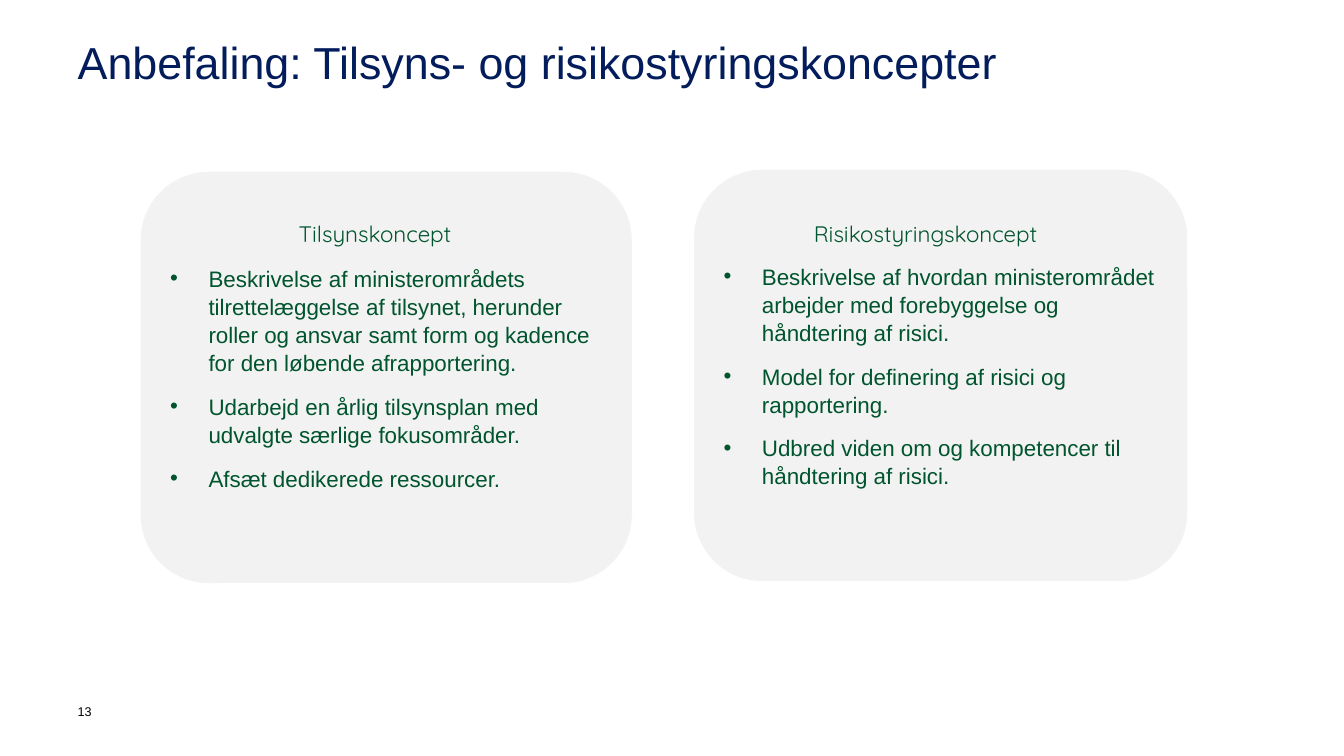
"""Build a slide recommending a supervision concept and a risk management concept."""
from dataclasses import dataclass

import lxml.etree
import pptx
import pptx.dml.color
import pptx.enum.shapes
import pptx.enum.text
import pptx.oxml.ns
import pptx.shapes.base
import pptx.slide
import pptx.text.text
import pptx.util

SLIDE_WIDTH = pptx.util.Inches(13.33)
SLIDE_HEIGHT = pptx.util.Inches(7.5)
COLOURS = {"navy": "031D5C", "green": "00542E", "panel": "F2F2F2", "white": "FFFFFF", "black": "000000"}
BULLET_INDENT = pptx.util.Inches(0.38)


@dataclass(frozen=True)
class Area:
    """A rectangle in percent of the slide's width and height."""

    left: float
    top: float
    width: float
    height: float

    def lengths(self) -> tuple[int, int, int, int]:
        """Return left, top, width and height as slide lengths."""
        return (
            int(SLIDE_WIDTH * self.left / 100),
            int(SLIDE_HEIGHT * self.top / 100),
            int(SLIDE_WIDTH * self.width / 100),
            int(SLIDE_HEIGHT * self.height / 100),
        )


@dataclass(frozen=True)
class TextStyle:
    """Font, size, colour and line spacing of a text."""

    font: str
    size: float
    colour: str
    line_spacing: float = 1.0


@dataclass(frozen=True)
class Concept:
    """A rounded panel with a heading and bullet points."""

    panel: Area
    heading_area: Area
    heading_inset: float
    heading: str
    points: tuple[str, ...]


TITLE_STYLE = TextStyle("Arial", 32, "navy", 0.9)
HEADING_STYLE = TextStyle("Quicksand", 16, "green", 1.08)
POINT_STYLE = TextStyle("Arial", 16, "green", 1.05)
NUMBER_STYLE = TextStyle("Arial", 9, "black")

CONCEPTS = (
    Concept(
        Area(10.43, 22.67, 36.61, 54.53),
        Area(21.08, 28.8, 17.33, 3.87),
        0.49,
        "Tilsynskoncept",
        (
            "Beskrivelse af ministerområdets tilrettelæggelse af tilsynet, herunder roller og ansvar "
            "samt form og kadence for den løbende afrapportering.",
            "Udarbejd en årlig tilsynsplan med udvalgte særlige fokusområder.",
            "Afsæt dedikerede ressourcer.",
        ),
    ),
    Concept(
        Area(51.61, 22.4, 36.76, 54.53),
        Area(59.49, 28.8, 24.76, 3.6),
        0.8,
        "Risikostyringskoncept",
        (
            "Beskrivelse af hvordan ministerområdet arbejder med forebyggelse og håndtering af risici.",
            "Model for definering af risici og rapportering.",
            "Udbred viden om og kompetencer til håndtering af risici.",
        ),
    ),
)


def colour(name: str) -> pptx.dml.color.RGBColor:
    """Return a named colour."""
    return pptx.dml.color.RGBColor.from_string(COLOURS[name])


def write(paragraph: pptx.text.text._Paragraph, text: str, style: TextStyle) -> None:
    """Add one styled run to a paragraph."""
    paragraph.line_spacing = style.line_spacing
    run = paragraph.add_run()
    run.text = text
    run.font.name = style.font
    run.font.size = pptx.util.Pt(style.size)
    run.font.color.rgb = colour(style.colour)


def add_bullet(paragraph: pptx.text.text._Paragraph) -> None:
    """Give a paragraph a hanging bullet."""
    properties = paragraph._p.get_or_add_pPr()
    properties.set("marL", str(BULLET_INDENT))
    properties.set("indent", str(-BULLET_INDENT))
    bullet_font = lxml.etree.SubElement(properties, pptx.oxml.ns.qn("a:buFont"))
    bullet_font.set("typeface", "Arial")
    bullet = lxml.etree.SubElement(properties, pptx.oxml.ns.qn("a:buChar"))
    bullet.set("char", "•")


def add_label(
    slide: pptx.slide.Slide,
    area: Area,
    text: str,
    style: TextStyle,
    alignment: pptx.enum.text.PP_ALIGN = pptx.enum.text.PP_ALIGN.LEFT,
    right_inset: float = 0,
) -> None:
    """Add a text box with one line of text."""
    frame = slide.shapes.add_textbox(*area.lengths()).text_frame
    frame.word_wrap = True
    frame.margin_left = frame.margin_top = frame.margin_bottom = 0
    frame.margin_right = pptx.util.Inches(right_inset)
    paragraph = frame.paragraphs[0]
    paragraph.alignment = alignment
    write(paragraph, text, style)


def add_concept(slide: pptx.slide.Slide, concept: Concept) -> None:
    """Add a panel with its bullet points and heading."""
    panel = slide.shapes.add_shape(
        pptx.enum.shapes.MSO_SHAPE.ROUNDED_RECTANGLE, *concept.panel.lengths()
    )
    panel.shadow.inherit = False
    panel.fill.solid()
    panel.fill.fore_color.rgb = colour("panel")
    panel.line.color.rgb = colour("white")
    panel.line.width = pptx.util.Pt(0.5)
    frame = panel.text_frame
    frame.word_wrap = True
    frame.vertical_anchor = pptx.enum.text.MSO_ANCHOR.MIDDLE
    for index, point in enumerate(concept.points):
        paragraph = frame.add_paragraph() if index else frame.paragraphs[0]
        add_bullet(paragraph)
        paragraph.alignment = pptx.enum.text.PP_ALIGN.LEFT
        paragraph.space_before = pptx.util.Pt(11 if index else 0)
        write(paragraph, point, POINT_STYLE)
    add_label(
        slide,
        concept.heading_area,
        concept.heading,
        HEADING_STYLE,
        pptx.enum.text.PP_ALIGN.CENTER,
        concept.heading_inset,
    )


def main() -> None:
    """Build and save the presentation."""
    presentation = pptx.Presentation()
    presentation.slide_width = SLIDE_WIDTH
    presentation.slide_height = SLIDE_HEIGHT
    slide = presentation.slides.add_slide(presentation.slide_layouts[6])
    add_label(slide, Area(5.78, 93.07, 2.33, 5.2), "13", NUMBER_STYLE)
    add_label(
        slide,
        Area(5.78, 5.33, 94.22, 13.6),
        "Anbefaling: Tilsyns- og risikostyringskoncepter",
        TITLE_STYLE,
        right_inset=0.86,
    )
    for concept in CONCEPTS:
        add_concept(slide, concept)
    presentation.save("out.pptx")


if __name__ == "__main__":
    main()
